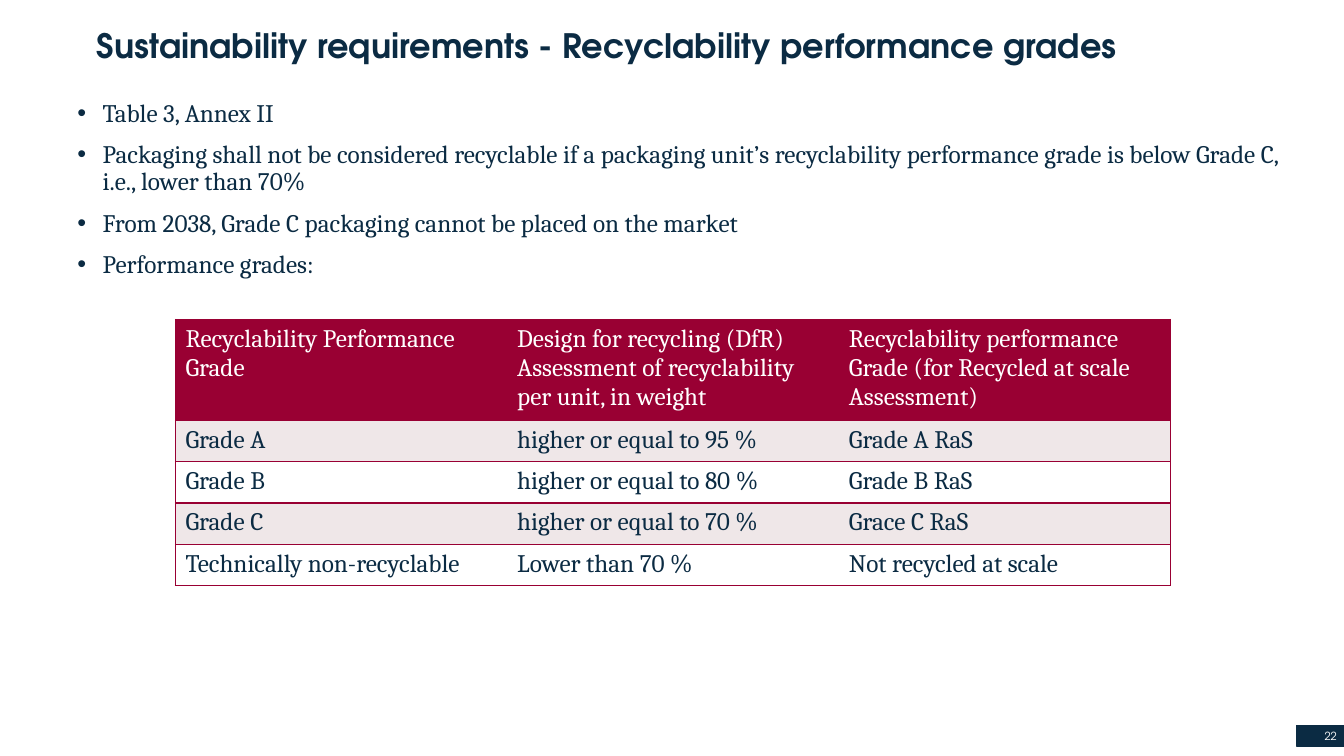
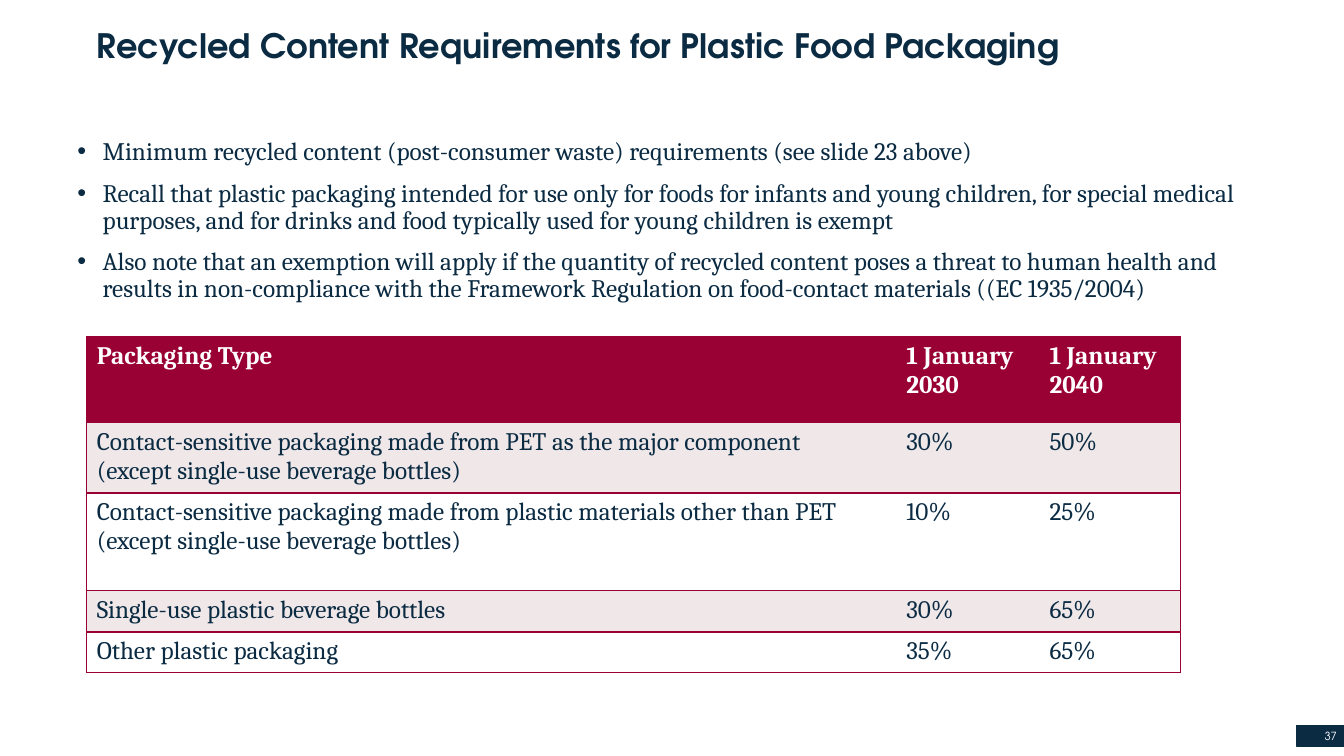
from lxml.etree import SubElement
from pptx import Presentation
from pptx.dml.color import RGBColor
from pptx.enum.shapes import MSO_SHAPE as Shape
from pptx.enum.text import MSO_ANCHOR as Anchor, PP_ALIGN as Align
from pptx.oxml.ns import qn
from pptx.util import Inches, Pt

NAVY, CRIMSON, BLUSH, WHITE = "0B2B43", "990033", "EFE7E8", "FFFFFF"
HEADING, BODY = "TeX Gyre Adventor", "Cambria"


def style(font, name, size, color, bold=False):
    font.name, font.size, font.bold = name, Pt(size), bold
    font.color.rgb = RGBColor.from_string(color)


def add_text(page, left, top, width, height, text, margin=None):
    box = page.shapes.add_textbox(Inches(left), Inches(top), Inches(width), Inches(height))
    frame = box.text_frame
    frame.word_wrap = True
    if margin is not None:
        frame.vertical_anchor = Anchor.MIDDLE
        frame.margin_left = Inches(margin)
        frame.margin_right = frame.margin_top = frame.margin_bottom = 0
    frame.text = text
    return frame


slides = [
    {
        "title": "Sustainability requirements - Recyclability performance grades",
        "number": "22",
        "body": (0.67, 0.95, 12.25, 5.75),
        "bullets": [
            "Table 3, Annex II",
            "Packaging shall not be considered recyclable if a packaging unit’s recyclability "
            "performance grade is below Grade C, i.e., lower than 70%",
            "From 2038, Grade C packaging cannot be placed on the market",
            "Performance grades:",
        ],
        "corner": (1.74, 3.17),
        "columns": [3.29, 3.29, 3.29],
        "heights": [0.96, 0.41, 0.41, 0.41, 0.41],
        "bold_header": False,
        "rows": [
            ("Recyclability Performance Grade",
             "Design for recycling (DfR)\nAssessment of recyclability per unit, in weight",
             "Recyclability performance Grade (for Recycled at scale Assessment)"),
            ("Grade A", "higher or equal to 95 %", "Grade A RaS"),
            ("Grade B", "higher or equal to 80 %", "Grade B RaS"),
            ("Grade C", "higher or equal to 70 %", "Grace C RaS"),
            ("Technically non-recyclable", "Lower than 70 %", "Not recycled at scale"),
        ],
    },
    {
        "title": "Recycled Content Requirements for Plastic Food Packaging",
        "number": "37",
        "body": (0.67, 1.33, 11.8, 5.92),
        "bullets": [
            "Minimum recycled content (post-consumer waste) requirements (see slide 23 above)",
            "Recall that plastic packaging intended for use only for foods for infants and young "
            "children, for special medical purposes, and for drinks and food typically used for "
            "young children is exempt",
            "Also note that an exemption will apply if the quantity of recycled content poses a "
            "threat to human health and results in non-compliance with the Framework Regulation "
            "on food-contact materials ((EC 1935/2004)",
        ],
        "corner": (0.86, 3.34),
        "columns": [8.03, 1.42, 1.4],
        "heights": [0.85, 0.68, 0.97, 0.41, 0.4],
        "bold_header": True,
        "rows": [
            ("Packaging Type", "1 January 2030", "1 January 2040"),
            ("Contact-sensitive packaging made from PET as the major component\n"
             "(except single-use beverage bottles)", "30%", "50%"),
            ("Contact-sensitive packaging made from plastic materials other than PET\n"
             "(except single-use beverage bottles)", "10%", "25%"),
            ("Single-use plastic beverage bottles", "30%", "65%"),
            ("Other plastic packaging", "35%", "65%"),
        ],
    },
]

deck = Presentation()
deck.slide_width, deck.slide_height = Inches(13.33), Inches(7.5)

for slide in slides:
    page = deck.slides.add_slide(deck.slide_layouts[6])

    band = page.shapes.add_shape(
        Shape.RECTANGLE, Inches(12.86), Inches(7.2), Inches(0.47), Inches(0.2))
    band.shadow.inherit = False
    band.fill.solid()
    band.fill.fore_color.rgb = band.line.color.rgb = RGBColor.from_string(NAVY)
    band.line.width = Pt(1)

    number = add_text(page, 12.12, 7.05, 1.14, 0.5, slide["number"], 0).paragraphs[0]
    number.alignment = Align.RIGHT
    style(number.font, HEADING, 8, WHITE)

    title = add_text(page, 0.46, 0, 12.87, 0.95, slide["title"], 0.5).paragraphs[0]
    title.line_spacing = 0.9
    style(title.font, HEADING, 24, NAVY, True)

    body = add_text(page, *slide["body"], "\n".join(slide["bullets"]))
    for index, para in enumerate(body.paragraphs):
        properties = para._p.get_or_add_pPr()
        properties.set("marL", str(Inches(0.25)))
        properties.set("indent", str(Inches(-0.25)))
        SubElement(SubElement(properties, qn("a:buClr")), qn("a:srgbClr"), val=NAVY)
        SubElement(properties, qn("a:buFont"), typeface="Arial")
        SubElement(properties, qn("a:buChar"), char="•")
        para.line_spacing = 0.9
        if index:
            para.space_before = Pt(10)
        style(para.font, BODY, 18, NAVY)

    rows, columns, heights = slide["rows"], slide["columns"], slide["heights"]
    left, top = slide["corner"]
    table = page.shapes.add_table(
        len(rows), len(columns), Inches(left), Inches(top),
        Inches(sum(columns)), Inches(sum(heights))).table
    for column, width in zip(table.columns, columns):
        column.width = Inches(width)
    for row, height in zip(table.rows, heights):
        row.height = Inches(height)

    for row_index, row in enumerate(rows):
        header = row_index == 0
        fill = CRIMSON if header else BLUSH if row_index % 2 else WHITE
        for column_index, text in enumerate(row):
            cell = table.cell(row_index, column_index)
            cell.text = text
            for para in cell.text_frame.paragraphs:
                style(para.font, BODY, 18, WHITE if header else NAVY,
                      header and slide["bold_header"])
            drawn = {"L": column_index == 0, "R": column_index == len(columns) - 1,
                     "T": True, "B": True}
            for side, visible in drawn.items():
                border = SubElement(
                    cell._tc.get_or_add_tcPr(), qn(f"a:ln{side}"), w=str(Pt(1)))
                if visible:
                    SubElement(SubElement(border, qn("a:solidFill")), qn("a:srgbClr"), val=CRIMSON)
                else:
                    SubElement(border, qn("a:noFill"))
            cell.fill.solid()
            cell.fill.fore_color.rgb = RGBColor.from_string(fill)

deck.save("out.pptx")
